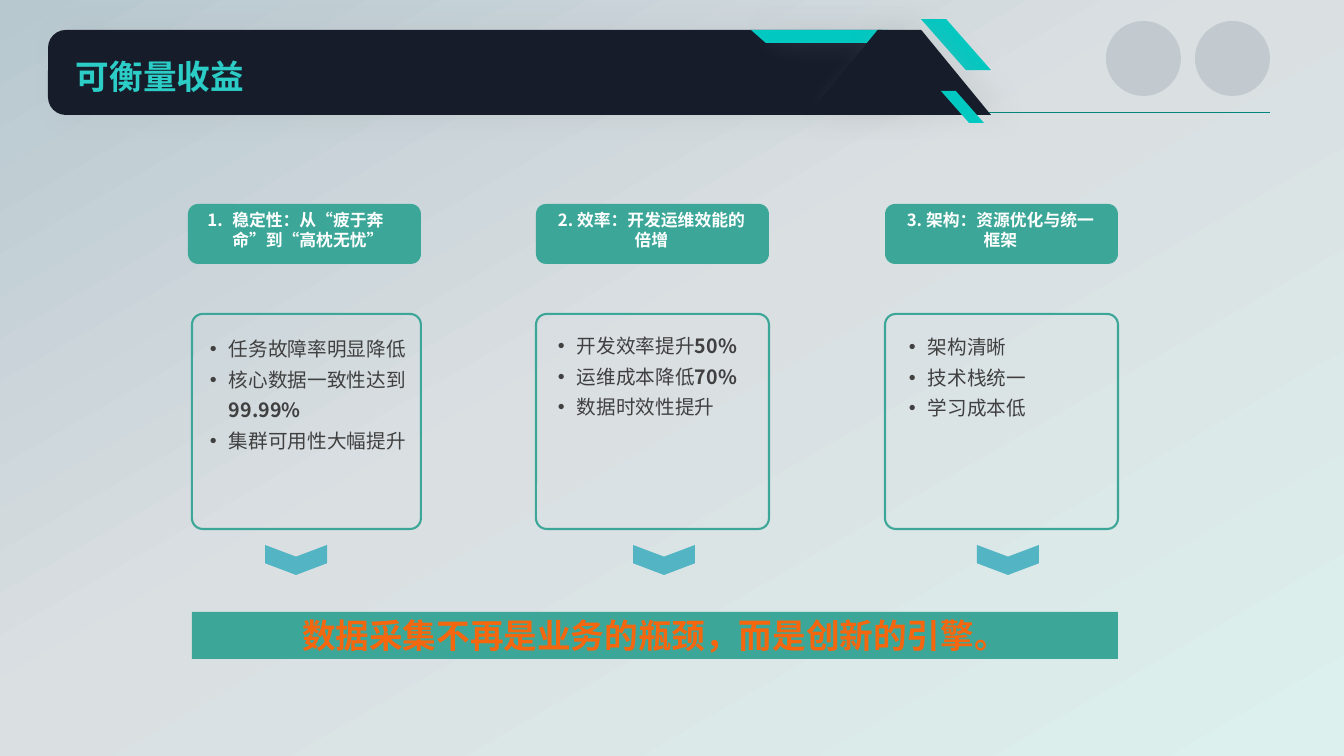
from copy import deepcopy

from pptx import Presentation
from pptx.dml.color import RGBColor
from pptx.enum.shapes import MSO_CONNECTOR, MSO_SHAPE
from pptx.enum.text import MSO_ANCHOR, PP_ALIGN
from pptx.oxml.ns import qn
from pptx.util import Pt
from lxml.etree import SubElement

PX = 914400 / 100.8
CJK = "Noto Sans CJK SC"
COLORS = {
    "bg_start": "DCF0ED", "bg_mid": "DADFE2", "bg_end": "B7C8CF",
    "navy": "161C2A", "cyan": "01C8C1", "title": "2CCDC7", "rule": "01857C",
    "circle": "66788C", "shadow": "A6A6A6", "green": "3CA798",
    "arrow": "53B4C4", "text": "404040", "white": "FFFFFF", "orange": "F5670F",
}
COLUMNS = [
    {"left": 188, "label": "稳定性：从“疲于奔命”到“高枕无忧”", "numbered": True,
     "label_dx": 3, "card_dx": 4, "list": (15, 327, 210), "arrow_dx": 108,
     "items": [["任务故障率明显降低"], ["核心数据一致性达到", "99.99%"],
               ["集群可用性大幅提升"]]},
    {"left": 536, "label": "2. 效率：开发运维效能的倍增", "numbered": False,
     "label_dx": 11, "card_dx": 0, "list": (15, 324, 203), "arrow_dx": 128,
     "items": [["开发效率提升", "50%"], ["运维成本降低", "70%"],
               ["数据时效性提升"]]},
    {"left": 885, "label": "3. 架构：资源优化与统一框架", "numbered": False,
     "label_dx": 11, "card_dx": 0, "list": (17, 325, 202), "arrow_dx": 123,
     "items": [["架构清晰"], ["技术栈统一"], ["学习成本低"]]},
]


def px(n):
    return round(n * PX)


def rgb(name):
    return RGBColor.from_string(COLORS[name])


def add_shape(slide, kind, box, fill=None, line=None, adj=None):
    sp = slide.shapes.add_shape(kind, *map(px, box))
    sp.shadow.inherit = False
    if fill:
        sp.fill.solid()
        sp.fill.fore_color.rgb = rgb(fill)
    else:
        sp.fill.background()
    if line:
        sp.line.color.rgb = rgb(line)
        sp.line.width = Pt(1.5)
    else:
        sp.line.fill.background()
    if adj is not None:
        sp.adjustments[0] = adj
    return sp


def add_alpha(color, percent):
    SubElement(color, qn("a:alpha"), val=str(percent * 1000))


def add_shadow(sp):
    effects = sp._element.spPr.find(qn("a:effectLst"))
    outer = SubElement(effects, qn("a:outerShdw"), blurRad=str(Pt(20)),
                       dist=str(Pt(10)), dir="0", algn="ctr", rotWithShape="0")
    add_alpha(SubElement(outer, qn("a:srgbClr"), val=COLORS["shadow"]), 20)


def flip(sp, axis):
    sp._element.spPr.find(qn("a:xfrm")).set(axis, "1")


def setup_frame(sp, inset=(7, 3), wrap=True, anchor=MSO_ANCHOR.TOP):
    tf = sp.text_frame
    tf.word_wrap = wrap
    tf.vertical_anchor = anchor
    tf.margin_left = tf.margin_right = px(inset[0])
    tf.margin_top = tf.margin_bottom = px(inset[1])
    return tf


def add_textbox(slide, box, **options):
    return setup_frame(slide.shapes.add_textbox(*map(px, box)), **options)


def add_run(p, text, size, color, bold=False, font=CJK):
    r = p.add_run()
    r.text = text
    r.font.size = Pt(size)
    r.font.bold = bold
    r.font.name = font
    r.font.color.rgb = rgb(color)
    SubElement(r._r.get_or_add_rPr(), qn("a:ea"), typeface=CJK)


def set_bullet(p, indent, tag, **attrs):
    pPr = p._p.get_or_add_pPr()
    pPr.set("marL", str(px(indent)))
    pPr.set("indent", str(px(-indent)))
    SubElement(pPr, qn("a:buFont"), typeface="Arial")
    SubElement(pPr, qn(tag), **attrs)


def paint_background(slide):
    fill = slide.background.fill
    fill.gradient()
    fill.gradient_angle = 120
    gs_list = slide._element.find(".//" + qn("a:gsLst"))
    gs_list.append(deepcopy(gs_list[-1]))
    stops = [("bg_start", 0), ("bg_mid", 0.53), ("bg_end", 1)]
    for stop, (name, pos) in zip(fill.gradient_stops, stops):
        stop.color.rgb = rgb(name)
        stop.position = pos


def add_banner(slide, x, y, w, h):
    rule = slide.shapes.add_connector(
        MSO_CONNECTOR.STRAIGHT, *map(px, (x + 25, y + 83, x + w, y + 83)))
    rule.line.color.rgb = rgb("rule")
    rule.line.width = Pt(0.75)
    SubElement(rule._element.spPr, qn("a:effectLst"))

    for dx in (1058, 1147):
        sp = add_shape(slide, MSO_SHAPE.OVAL, (x + dx, y - 9, 75, 75), "circle")
        add_alpha(sp._element.spPr.find(".//" + qn("a:srgbClr")), 20)

    parts = [
        (MSO_SHAPE.ROUNDED_RECTANGLE, (0, 0, 852, h), "navy", 0.21, None, True),
        (MSO_SHAPE.TRAPEZOID, (703, 0, 138, 13), "cyan", 1.14, "flipV", True),
        (MSO_SHAPE.PARALLELOGRAM, (873, -11, 70, 51), "cyan", 0.88, "flipH", False),
        (MSO_SHAPE.TRAPEZOID, (760, 0, 183, h), "navy", 0.82, None, True),
        (MSO_SHAPE.PARALLELOGRAM, (893, 61, 43, 32), "cyan", 0.88, "flipH", False),
    ]
    for kind, (dx, dy, pw, ph), color, adj, axis, shadowed in parts:
        sp = add_shape(slide, kind, (x + dx, y + dy, pw, ph), color, adj=adj)
        if axis:
            flip(sp, axis)
        if shadowed:
            add_shadow(sp)

    tf = add_textbox(slide, (x + 28, y + 26, 168, 40), inset=(0, 0), wrap=False)
    add_run(tf.paragraphs[0], "可衡量收益", 24, "title", True, "Arial")


def add_column(slide, col, y, w):
    x = col["left"]
    card_x = x + col["card_dx"]
    add_shape(slide, MSO_SHAPE.ROUNDED_RECTANGLE,
              (card_x, y + 110, w - col["card_dx"], 215), line="green", adj=0.05)

    dx, top, list_w = col["list"]
    tf = add_textbox(slide, (x + dx, top, list_w, 99))
    for i, item in enumerate(col["items"]):
        p = tf.add_paragraph() if i else tf.paragraphs[0]
        p.line_spacing = 1.3
        set_bullet(p, 19, "a:buChar", char="•")
        for text in item:
            add_run(p, text, 14, "text", bold=text.endswith("%"))

    add_shape(slide, MSO_SHAPE.ROUNDED_RECTANGLE, (x, y, w, 60), "green")
    tf = add_textbox(slide, (x + col["label_dx"], y + 3, 209, 54))
    p = tf.paragraphs[0]
    p.alignment = PP_ALIGN.CENTER
    if col["numbered"]:
        set_bullet(p, 25, "a:buAutoNum", type="arabicPeriod")
    add_run(p, col["label"], 12, "white", True)

    arrow = add_shape(slide, MSO_SHAPE.CHEVRON,
                      (x + col["arrow_dx"] - 15, y + 325, 30, 62), "arrow", adj=0.39)
    arrow.rotation = 90


def add_conclusion(slide, x, y, w, h):
    sp = add_shape(slide, MSO_SHAPE.RECTANGLE, (x, y, w, h), "green")
    p = setup_frame(sp, anchor=MSO_ANCHOR.MIDDLE).paragraphs[0]
    p.alignment = PP_ALIGN.CENTER
    add_run(p, "数据采集不再是业务的瓶颈，而是创新的引擎。", 24, "orange", True)


def main():
    prs = Presentation()
    prs.slide_width, prs.slide_height = px(1344), px(756)
    slide = prs.slides.add_slide(prs.slide_layouts[6])
    paint_background(slide)
    add_banner(slide, 48, 30, 1222, 85)
    for col in COLUMNS:
        add_column(slide, col, 204, 233)
    add_conclusion(slide, 192, 612, 926, 47)
    prs.save("out.pptx")


if __name__ == "__main__":
    main()
